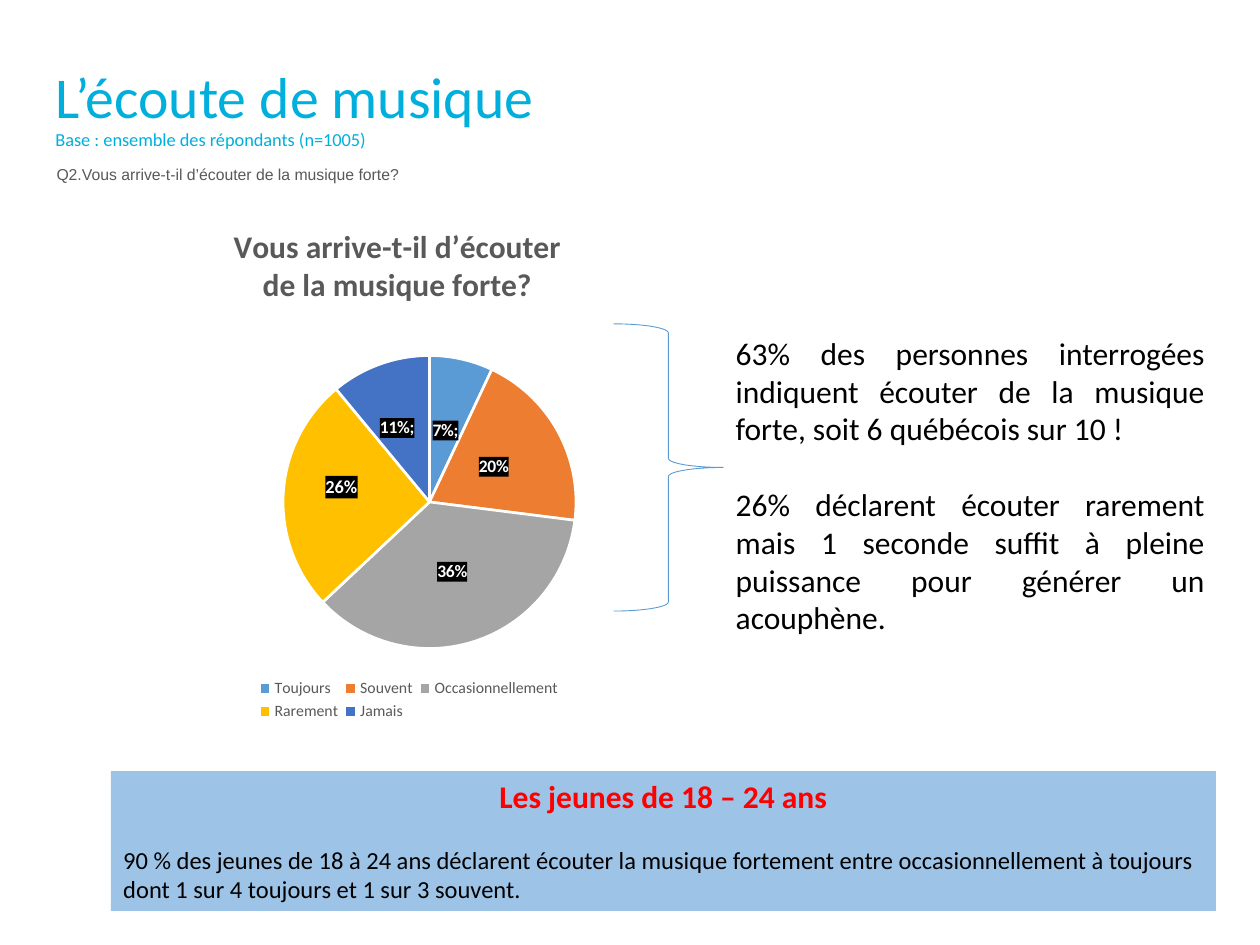
from lxml import etree
from pptx import Presentation
from pptx.chart.data import CategoryChartData
from pptx.dml.color import RGBColor
from pptx.enum import chart as ch, shapes, text
from pptx.oxml import parse_xml
from pptx.oxml.ns import nsdecls, qn
from pptx.util import Inches, Pt

THEME = {
    "font": "Calibri", "question_font": "Arial",
    "cyan": "00AFDC", "grey": "595959", "dark": "404040", "black": "000000",
    "white": "FFFFFF", "red": "FF0000", "blue": "5B9BD5", "panel": "9DC3E6",
    "title": 33, "base": 10.5, "small": 9, "label": 10, "big_label": 10.5,
    "note": 14, "body": 18,
}
TITLE = ("L’écoute de musique", "Base : ensemble des répondants (n=1005)")
QUESTION = "Q2.Vous arrive-t-il d’écouter de la musique forte?"
CHART_TITLE = ("Vous arrive-t-il d’écouter", "de la musique forte?")
ANSWERS = [  # category, share, label, colour, label size, label shift
    ("Toujours", 0.07, "7%;", "5B9BD5", "label", None),
    ("Souvent", 0.20, "20%", "ED7D31", "label", None),
    ("Occasionnellement ", 0.36, "36%", "A5A5A5", "label", None),
    ("Rarement", 0.26, "26%", "FFC000", "big_label", (-0.02, -0.02)),
    ("Jamais", 0.11, "11%;", "4472C4", "label", (-0.01, -0.01)),
]
FINDINGS = [
    "63% des personnes interrogées indiquent écouter de la musique forte, "
    "soit 6 québécois sur 10 !",
    "26% déclarent écouter rarement mais 1 seconde suffit à pleine puissance "
    "pour générer un acouphène.",
]
YOUTH_TITLE = "Les jeunes de 18 – 24 ans"
YOUTH_LINES = [
    "90 % des jeunes de 18 à 24 ans déclarent écouter la musique fortement "
    "entre occasionnellement à toujours",
    "dont 1 sur 4 toujours et 1 sur 3 souvent.",
]
BOXES = {  # left, top, width, height
    "title": (0.34, 0.32, 5.94, 1.1),
    "question": (0.35, 1.26, 8.89, 0.25),
    "chart": (0.27, 1.68, 5.98, 4.08),
    "brace": (4.87, 2.57, 0.87, 2.28),
    "findings": (5.74, 2.6, 3.92, 2.52),
    "youth": (0.88, 6.12, 8.77, 1.11),
}
LINE_HEIGHT = 1.2


def box(name):
    return [Inches(v) for v in BOXES[name]]


def rgb(name):
    return RGBColor.from_string(THEME.get(name, name))


def style(font, size, color, bold=False, face="font"):
    font.name, font.size, font.bold = THEME[face], Pt(THEME[size]), bold
    font.color.rgb = rgb(color)


def write(tf, lines, size, color, align, bold=False, face="font"):
    """Fill a text frame, one paragraph per line."""
    tf.word_wrap = True
    tf.vertical_anchor = text.MSO_ANCHOR.TOP
    tf.text = "\n".join(lines)
    for p in tf.paragraphs:
        p.alignment = align
        for r in p.runs:
            style(r.font, size, color, bold, face)


def place(parent, x, y, w=None, h=None, inner=False, edge=True):
    """Give a chart part a manual layout, in fractions of the chart."""
    for old in parent.findall(qn("c:layout")):
        parent.remove(old)
    layout = etree.Element(qn("c:layout"))
    manual = etree.SubElement(layout, qn("c:manualLayout"))
    mode = "edge" if edge else None
    values = [("layoutTarget", "inner" if inner else None), ("xMode", mode),
              ("yMode", mode), ("x", x), ("y", y), ("w", w), ("h", h)]
    for tag, value in values:
        if value is not None:
            etree.SubElement(manual, qn("c:" + tag)).set("val", str(value))
    before = [parent.find(qn("c:" + t)) for t in ("idx", "tx", "legendPos")]
    anchor = next((e for e in before if e is not None), None)
    if anchor is None:
        parent.insert(0, layout)
    else:
        anchor.addnext(layout)


def add_title(slide):
    sp = slide.shapes.title
    sp.left, sp.top, sp.width, sp.height = box("title")
    tf = sp.text_frame
    tf.text = "\v".join(TITLE)
    tf.vertical_anchor = text.MSO_ANCHOR.MIDDLE
    p = tf.paragraphs[0]
    p.alignment, p.line_spacing = text.PP_ALIGN.LEFT, 0.9
    for r, size in zip(p.runs, ("title", "base")):
        style(r.font, size, "cyan")


def label_point(point, label, size, shift):
    """White bold label on a black ground, optionally moved from the centre."""
    tf = point.data_label.text_frame
    tf.text = label
    style(tf.paragraphs[0].runs[0].font, size, "white", True)
    point.data_label.position = ch.XL_LABEL_POSITION.CENTER
    tx = tf.paragraphs[0]._p.getparent().getparent()
    d_lbl = tx.getparent()
    for old in d_lbl.findall(qn("c:spPr")):
        d_lbl.remove(old)
    tx.addnext(parse_xml(
        f'<c:spPr {nsdecls("c", "a")}><a:solidFill>'
        f'<a:srgbClr val="{THEME["black"]}"/></a:solidFill></c:spPr>'))
    d_lbl.find(qn("c:showPercent")).set("val", "1")
    if shift:
        place(d_lbl, *shift, edge=False)


def add_pie(slide):
    data = CategoryChartData(number_format="0%")
    data.categories = [a[0] for a in ANSWERS]
    data.add_series("Series 1", [a[1] for a in ANSWERS])
    chart = slide.shapes.add_chart(ch.XL_CHART_TYPE.PIE, *box("chart"), data).chart
    style(chart.font, "label", "black")

    chart.has_title = True
    tf = chart.chart_title.text_frame
    tf.text = "\n".join(CHART_TITLE)
    for p in tf.paragraphs:
        style(p.runs[0].font, "body", "grey", True)
    chart.chart_title.include_in_layout = False

    chart.has_legend = True
    chart.legend.position = ch.XL_LEGEND_POSITION.BOTTOM
    chart.legend.include_in_layout = False
    style(chart.legend.font, "small", "grey")

    plot = chart.plots[0]
    plot.vary_by_categories = True
    series = plot.series[0]
    labels = series.data_labels
    labels.show_value = labels.show_percentage = True
    labels.number_format, labels.number_format_is_linked = "0%", False
    labels.position = ch.XL_LABEL_POSITION.CENTER
    style(labels.font, "small", "dark")
    for i, (_, _, label, color, size, shift) in enumerate(ANSWERS):
        point = series.points[i]
        point.format.fill.solid()
        point.format.fill.fore_color.rgb = rgb(color)
        point.format.line.color.rgb = rgb("white")
        point.format.line.width = Pt(1.5)
        label_point(point, label, size, shift)

    root = chart._chartSpace.chart
    place(root.find(qn("c:title")), 0.26, 0.02)
    place(root.plotArea, 0.33, 0.28, 0.39, 0.57, inner=True)
    place(root.find(qn("c:legend")), 0.29, 0.9, 0.42, 0.1)


def add_brace(slide):
    sp = slide.shapes.add_shape(shapes.MSO_SHAPE.RIGHT_BRACE, *box("brace"))
    sp.shadow.inherit = False
    sp.fill.background()
    sp.line.color.rgb, sp.line.width = rgb("blue"), Pt(0.5)


def add_youth_panel(slide):
    sp = slide.shapes.add_shape(shapes.MSO_SHAPE.RECTANGLE, *box("youth"))
    sp.shadow.inherit = False
    sp.fill.solid()
    sp.fill.fore_color.rgb = rgb("panel")
    sp.line.fill.background()
    tf = sp.text_frame
    write(tf, [YOUTH_TITLE] + YOUTH_LINES, "note", "black", text.PP_ALIGN.LEFT)
    head, first = tf.paragraphs[:2]
    head.alignment = text.PP_ALIGN.CENTER
    style(head.runs[0].font, "body", "red", True)
    first.space_before = Pt(THEME["note"] * LINE_HEIGHT)


def main():
    prs = Presentation()
    prs.slide_width, prs.slide_height = Inches(10), Inches(7.5)
    slide = prs.slides.add_slide(prs.slide_layouts[5])
    add_title(slide)
    question = slide.shapes.add_textbox(*box("question")).text_frame
    write(question, [QUESTION], "small", "grey", text.PP_ALIGN.LEFT,
          face="question_font")
    add_pie(slide)
    add_brace(slide)
    findings = slide.shapes.add_textbox(*box("findings")).text_frame
    write(findings, FINDINGS, "body", "black", text.PP_ALIGN.JUSTIFY)
    findings.paragraphs[1].space_before = Pt(THEME["body"] * LINE_HEIGHT)
    add_youth_panel(slide)
    prs.save("out.pptx")


if __name__ == "__main__":
    main()
